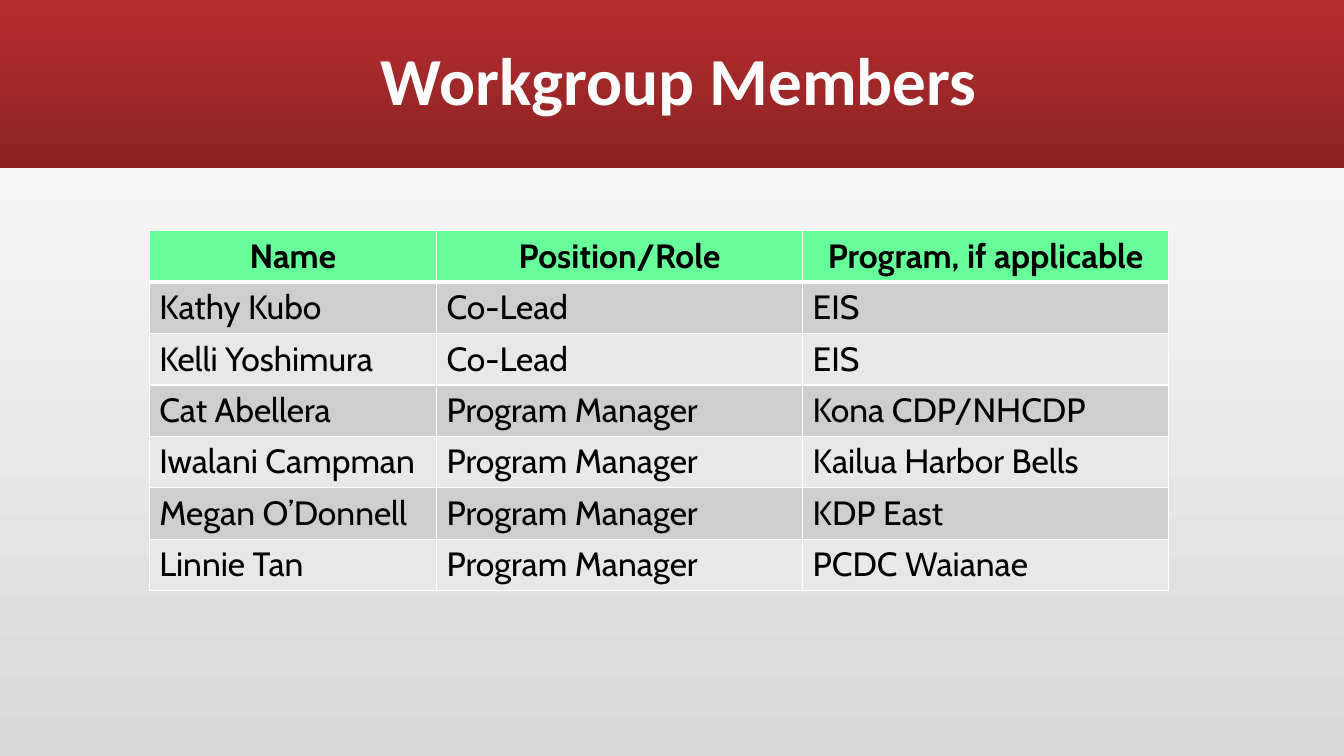
from dataclasses import dataclass

from lxml import etree
from pptx import Presentation
from pptx import util as u
from pptx.dml.color import RGBColor
from pptx.enum import shapes, text
from pptx.oxml import ns


@dataclass(frozen=True)
class Theme:
    title_font: str = "Calibri"
    body_font: str = "Cabin"
    title_size: int = 48
    body_size: int = 24
    white: str = "FFFFFF"
    black: str = "000000"
    backdrop: tuple = ("FFFFFF", "D9D9D9")
    banner: tuple = ("B82D2F", "8A2223")
    header: str = "66FF99"
    bands: tuple = ("CECECE", "E8E8E8")
    rule: float = 1
    header_rule: float = 3


class SlideBuilder:
    def __init__(self, page, theme):
        self.page = page
        self.theme = theme

    def gradient(self, fill, colors):
        """Fill from top to bottom."""
        fill.gradient()
        fill.gradient_angle = 270
        for stop, color in zip(fill.gradient_stops, colors):
            stop.color.rgb = RGBColor.from_string(color)

    def style(self, para, font, size, color, bold=False):
        for span in para.runs:
            span.font.name = font
            span.font.size = u.Pt(size)
            span.font.bold = bold
            span.font.color.rgb = RGBColor.from_string(color)

    def background(self):
        self.gradient(self.page.background.fill, self.theme.backdrop)

    def banner(self, left, top, width, height):
        box = self.page.shapes.add_shape(
            shapes.MSO_SHAPE.RECTANGLE,
            *map(u.Inches, (left, top, width, height)))
        box.shadow.inherit = False
        box.line.fill.background()
        self.gradient(box.fill, self.theme.banner)

    def title(self, words, left, top, width, height):
        box = self.page.shapes.add_textbox(
            *map(u.Inches, (left, top, width, height)))
        frame = box.text_frame
        frame.word_wrap = True
        frame.vertical_anchor = text.MSO_ANCHOR.MIDDLE
        frame.text = words
        para = frame.paragraphs[0]
        para.alignment = text.PP_ALIGN.CENTER
        para.line_spacing = 0.9
        self.style(para, self.theme.title_font, self.theme.title_size,
                   self.theme.white, bold=True)

    def borders(self, cell, top, bottom):
        props = cell._tc.get_or_add_tcPr()
        rule = self.theme.rule
        for side, points in zip("LRTB", (rule, rule, top, bottom)):
            line = etree.SubElement(props, ns.qn(f"a:ln{side}"),
                                    w=str(int(u.Pt(points))))
            solid = etree.SubElement(line, ns.qn("a:solidFill"))
            etree.SubElement(solid, ns.qn("a:srgbClr"), val=self.theme.white)

    def table(self, rows, left, top, widths, row_height):
        theme = self.theme
        grid = self.page.shapes.add_table(
            len(rows), len(widths),
            *map(u.Inches, (left, top, sum(widths), row_height * len(rows)))).table
        for column, width in zip(grid.columns, widths):
            column.width = u.Inches(width)
        for i, entries in enumerate(rows):
            grid.rows[i].height = u.Inches(row_height)
            is_header = i == 0
            fill = theme.header if is_header else theme.bands[(i - 1) % 2]
            above = theme.header_rule if i == 1 else theme.rule
            below = theme.header_rule if is_header else theme.rule
            for j, words in enumerate(entries):
                cell = grid.cell(i, j)
                self.borders(cell, above, below)
                cell.fill.solid()
                cell.fill.fore_color.rgb = RGBColor.from_string(fill)
                cell.text_frame.text = words
                para = cell.text_frame.paragraphs[0]
                if is_header:
                    para.alignment = text.PP_ALIGN.CENTER
                self.style(para, theme.body_font, theme.body_size,
                           theme.black, bold=is_header)


MEMBERS = [
    ("Name", "Position/Role", "Program, if applicable"),
    ("Kathy Kubo", "Co-Lead", "EIS"),
    ("Kelli Yoshimura", "Co-Lead", "EIS"),
    ("Cat Abellera", "Program Manager", "Kona CDP/NHCDP"),
    ("Iwalani Campman", "Program Manager", "Kailua Harbor Bells"),
    ("Megan O’Donnell", "Program Manager", "KDP East"),
    ("Linnie Tan", "Program Manager", "PCDC Waianae"),
]


def main():
    deck = Presentation()
    deck.slide_width = u.Inches(13.33)
    deck.slide_height = u.Inches(7.5)
    page = deck.slides.add_slide(deck.slide_layouts[6])
    builder = SlideBuilder(page, Theme())

    # Backdrop and banner
    builder.background()
    builder.banner(0, 0, 13.33, 1.67)

    # Title
    builder.title("Workgroup Members", 0.4, 0.11, 12.67, 1.45)

    # Member table
    builder.table(MEMBERS, 1.48, 2.29, (2.85, 3.63, 3.63), 0.51)

    deck.save("out.pptx")


if __name__ == "__main__":
    main()
